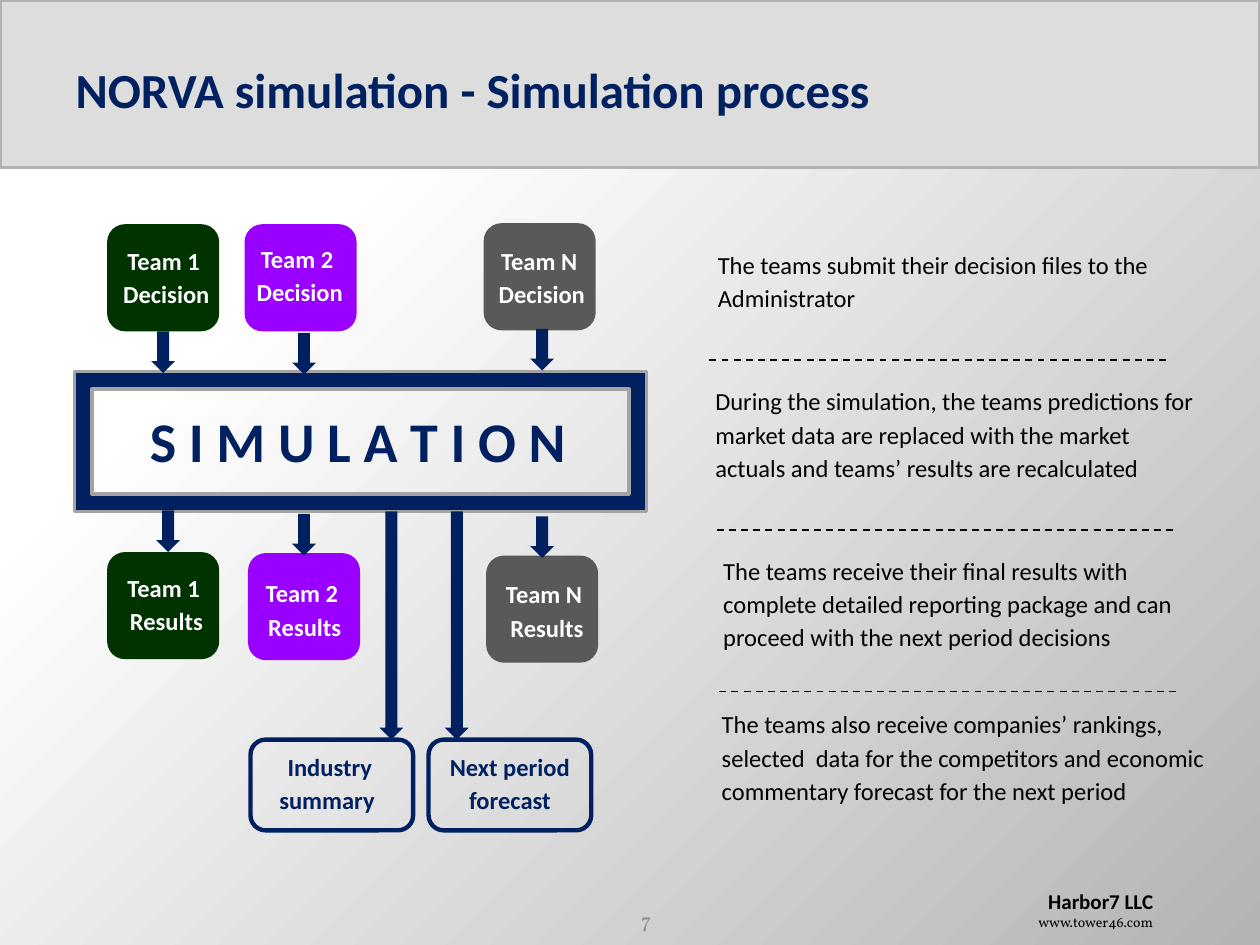
"""Build the simulation process slide."""
from dataclasses import dataclass

from lxml.etree import SubElement
from pptx import Presentation
from pptx.dml.color import RGBColor
from pptx.enum.dml import MSO_LINE
from pptx.enum.shapes import MSO_CONNECTOR, MSO_SHAPE
from pptx.enum.text import MSO_ANCHOR, MSO_AUTO_SIZE, PP_ALIGN
from pptx.oxml import parse_xml
from pptx.oxml.ns import nsdecls, qn
from pptx.shapes.autoshape import Shape
from pptx.slide import Slide
from pptx.text.text import TextFrame
from pptx.util import Cm, Pt

BLACK = RGBColor(0x00, 0x00, 0x00)
WHITE = RGBColor(0xFF, 0xFF, 0xFF)
NAVY = RGBColor(0x00, 0x20, 0x60)
GREEN = RGBColor(0x00, 0x33, 0x00)
PURPLE = RGBColor(0x99, 0x00, 0xFF)
GRAY = RGBColor(0x59, 0x59, 0x59)
HEADER_FILL = RGBColor(0xDD, 0xDD, 0xDD)
HEADER_LINE = RGBColor(0xB2, 0xB2, 0xB2)
FRAME_LINE = RGBColor(0xA3, 0xA3, 0xA3)
NUMBER_GRAY = RGBColor(0x8C, 0x8C, 0x8C)

BACKGROUND = f"""<p:bg {nsdecls('p', 'a')}><p:bgPr><a:gradFill rotWithShape="1"><a:gsLst>
<a:gs pos="24000"><a:srgbClr val="FFFFFF"/></a:gs>
<a:gs pos="100000"><a:srgbClr val="B4B4B4"/></a:gs></a:gsLst>
<a:path path="circle"><a:fillToRect r="100000" b="100000"/></a:path>
</a:gradFill><a:effectLst/></p:bgPr></p:bg>"""


@dataclass(frozen=True)
class Box:
    left: float
    top: float
    width: float
    height: float

    def lengths(self) -> tuple[Cm, Cm, Cm, Cm]:
        return Cm(self.left), Cm(self.top), Cm(self.width), Cm(self.height)


@dataclass(frozen=True)
class TextStyle:
    size: float
    color: RGBColor
    bold: bool = False
    alignment: PP_ALIGN = PP_ALIGN.LEFT
    font: str = "Calibri"
    spacing: float | None = None


@dataclass(frozen=True)
class TeamNode:
    team: str
    stage: str
    color: RGBColor
    left: float
    top: float
    label_left: float
    label_top: float
    arrow_left: float
    arrow_top: float


@dataclass(frozen=True)
class Report:
    text: str
    left: float
    label_left: float
    arrow_left: float


@dataclass(frozen=True)
class Note:
    text: str
    box: Box


TEAM_STYLE = TextStyle(14, WHITE, True, PP_ALIGN.CENTER, spacing=19)
REPORT_STYLE = TextStyle(14, NAVY, True, PP_ALIGN.CENTER, spacing=19)
NOTE_STYLE = TextStyle(14, BLACK, spacing=19)

TEAM_NODES = (
    TeamNode("Team 1 ", "Decision", GREEN, 2.16, 4.52, 2.11, 4.75, 3.05, 6.68),
    TeamNode("Team 2 ", "Decision", PURPLE, 4.93, 4.52, 4.8, 4.72, 5.89, 6.71),
    TeamNode("Team N ", "Decision", GRAY, 9.75, 4.5, 9.68, 4.75, 10.69, 6.63),
    TeamNode("Team 1 ", "Results", GREEN, 2.16, 11.13, 2.11, 11.35, 3.15, 10.29),
    TeamNode("Team 2 ", "Results", PURPLE, 5.0, 11.15, 4.9, 11.46, 5.89, 10.36),
    TeamNode("Team N ", "Results", GRAY, 9.8, 11.2, 9.78, 11.48, 10.69, 10.41),
)
REPORTS = (
    Report("Industry summary ", 5.05, 4.9, 7.65),
    Report("Next period forecast", 8.64, 8.53, 8.97),
)
NOTES = (
    Note("The teams submit their decision files to the Administrator",
         Box(14.22, 4.83, 9.63, 2.64)),
    Note("During the simulation, the teams predictions for market data are replaced "
         "with the market actuals and teams’ results are recalculated",
         Box(14.17, 7.59, 10.36, 3.66)),
    Note("The teams receive their final results with complete detailed reporting "
         "package and can proceed with the next period decisions",
         Box(14.33, 11.0, 10.01, 2.64)),
    Note("The teams also receive companies’ rankings, selected  data for the "
         "competitors and economic commentary forecast for the next period",
         Box(14.3, 14.1, 10.26, 2.64)),
)
DIVIDERS = ((14.3, 7.26), (14.45, 10.69), (14.5, 13.94))
DIVIDER_LENGTH = 9.22


def write_text(text_frame: TextFrame, lines: dict[str, TextStyle]) -> None:
    text_frame.text = "\n".join(lines)
    text_frame.word_wrap = True
    for paragraph, style in zip(text_frame.paragraphs, lines.values()):
        paragraph.alignment = style.alignment
        if style.spacing:
            paragraph.line_spacing = Pt(style.spacing)
        for run in paragraph.runs:
            run.font.name = style.font
            run.font.size = Pt(style.size)
            run.font.bold = style.bold
            run.font.color.rgb = style.color


def add_text(slide: Slide, box: Box, lines: dict[str, TextStyle]) -> Shape:
    text_box = slide.shapes.add_textbox(*box.lengths())
    write_text(text_box.text_frame, lines)
    return text_box


def add_block(slide: Slide, kind: MSO_SHAPE, box: Box, fill: RGBColor | None = None,
              line: RGBColor | None = None, line_width: float = 2) -> Shape:
    shape = slide.shapes.add_shape(kind, *box.lengths())
    shape.shadow.inherit = False
    if fill is None:
        shape.fill.background()
    else:
        shape.fill.solid()
        shape.fill.fore_color.rgb = fill
    if line is None:
        shape.line.fill.background()
    else:
        shape.line.color.rgb = line
        shape.line.width = Pt(line_width)
    return shape


def add_arrow(slide: Slide, left: float, top: float, height: float) -> None:
    add_block(slide, MSO_SHAPE.DOWN_ARROW, Box(left, top, 0.48, height), NAVY)


def add_team_node(slide: Slide, node: TeamNode) -> None:
    add_block(slide, MSO_SHAPE.ROUNDED_RECTANGLE,
              Box(node.left, node.top, 2.26, 2.16), node.color)
    add_text(slide, Box(node.label_left, node.label_top, 2.49, 2.01),
             {node.team: TEAM_STYLE, node.stage: TEAM_STYLE})


def add_report(slide: Slide, report: Report) -> None:
    add_block(slide, MSO_SHAPE.ROUNDED_RECTANGLE,
              Box(report.left, 14.91, 3.28, 1.83), line=NAVY, line_width=2.5)
    add_text(slide, Box(report.label_left, 14.96, 3.5, 1.75), {report.text: REPORT_STYLE})


def add_divider(slide: Slide, left: float, top: float) -> None:
    connector = slide.shapes.add_connector(
        MSO_CONNECTOR.STRAIGHT, Cm(left), Cm(top), Cm(left + DIVIDER_LENGTH), Cm(top))
    connector.line.color.rgb = BLACK
    connector.line.width = Pt(1)
    connector.line.dash_style = MSO_LINE.DASH
    SubElement(connector._element.spPr, qn("a:effectLst"))


def add_title(slide: Slide) -> None:
    add_block(slide, MSO_SHAPE.RECTANGLE, Box(0, 0, 25.4, 3.38), HEADER_FILL, HEADER_LINE)
    title = slide.shapes.title
    title.left, title.top, title.width, title.height = Box(1.27, 0.2, 22.86, 3.18).lengths()
    write_text(title.text_frame,
               {"NORVA simulation - Simulation process": TextStyle(28, NAVY, True)})
    title.text_frame.auto_size = MSO_AUTO_SIZE.NONE
    title.text_frame.vertical_anchor = MSO_ANCHOR.MIDDLE
    slide.shapes._spTree.append(title._element)


def add_footer(slide: Slide) -> None:
    add_text(slide, Box(20.32, 17.78, 3.18, 1.12), {
        "Harbor7 LLC": TextStyle(12, BLACK, True, PP_ALIGN.RIGHT),
        "www.tower46.com": TextStyle(8, BLACK, False, PP_ALIGN.RIGHT, "Vollkorn")})
    number = add_text(slide, Box(12.01, 18.03, 1.37, 1.02), {
        "7": TextStyle(12, NUMBER_GRAY, False, PP_ALIGN.RIGHT, "Vollkorn")})
    number.text_frame.vertical_anchor = MSO_ANCHOR.MIDDLE


def main() -> None:
    presentation = Presentation()
    presentation.slide_width, presentation.slide_height = Cm(25.4), Cm(19.05)
    slide = presentation.slides.add_slide(presentation.slide_layouts[5])
    slide._element.cSld.insert(0, parse_xml(BACKGROUND))
    add_title(slide)
    add_footer(slide)
    for node in TEAM_NODES:
        add_team_node(slide, node)
    for report in REPORTS:
        add_report(slide, report)
    for note in NOTES:
        add_text(slide, note.box, {note.text: NOTE_STYLE})
    for left, top in DIVIDERS:
        add_divider(slide, left, top)
    add_block(slide, MSO_SHAPE.FRAME, Box(1.5, 7.49, 11.53, 2.82), NAVY, FRAME_LINE)
    add_text(slide, Box(2.77, 8.08, 9.93, 1.02),
             {"S I M U L A T I O N": TextStyle(32, NAVY, True)})
    for node in TEAM_NODES:
        add_arrow(slide, node.arrow_left, node.arrow_top, 0.84)
    for report in REPORTS:
        add_arrow(slide, report.arrow_left, 10.31, 4.6)
    presentation.save("out.pptx")


if __name__ == "__main__":
    main()
